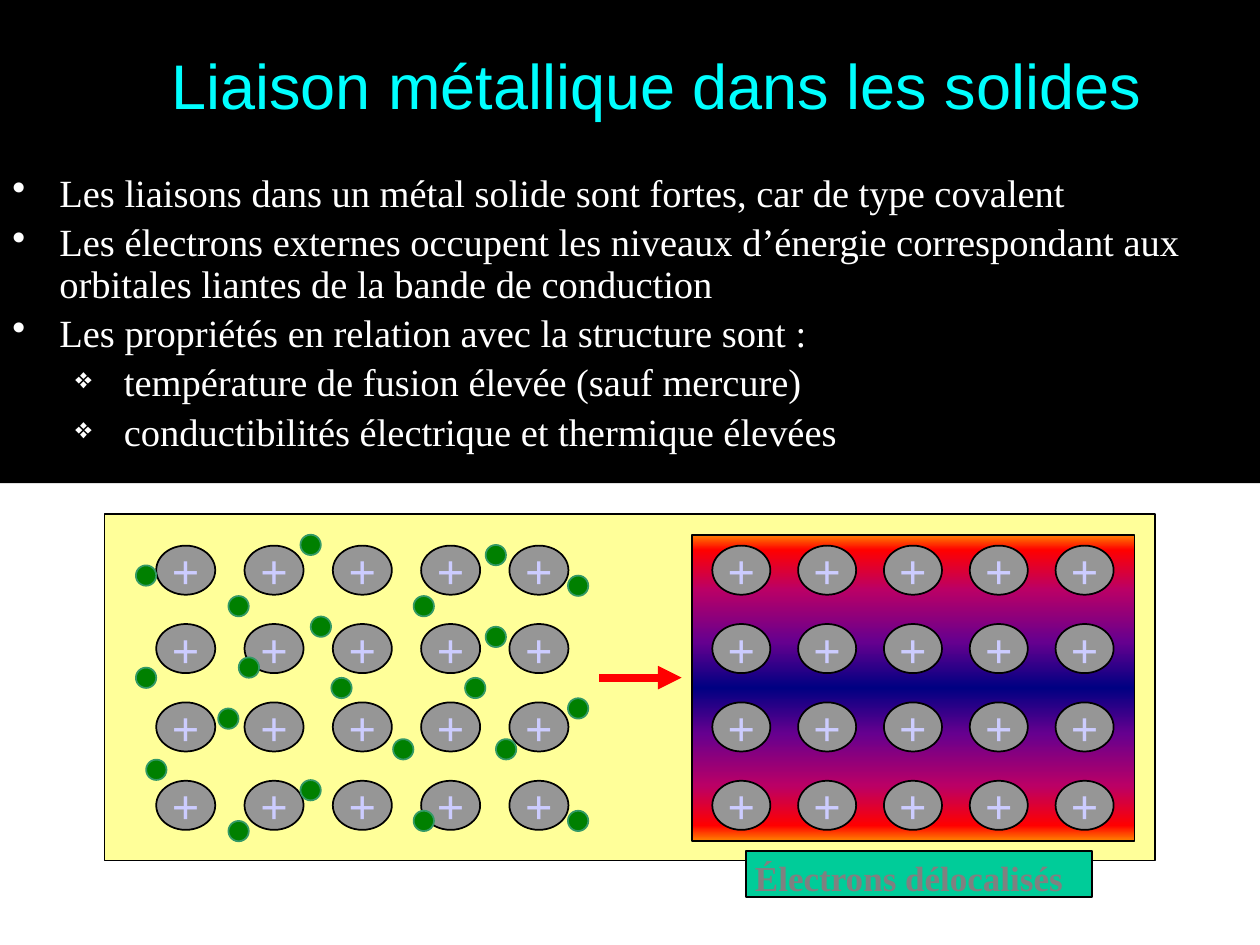
from itertools import product

from lxml.etree import SubElement
from pptx import Presentation
from pptx.dml.color import RGBColor
from pptx.enum.shapes import MSO_CONNECTOR, MSO_SHAPE
from pptx.enum.text import MSO_ANCHOR, PP_ALIGN
from pptx.oxml.ns import qn
from pptx.util import Cm, Pt


def colour(value):
    return RGBColor.from_string(value)


def set_values(target, values):
    for name, value in values.items():
        setattr(target, name, value)


class SlideBuilder:
    serif = "Times New Roman"
    sans = "Arial"
    black = "000000"

    def __init__(self, slide):
        self.slide = slide

    def shape(self, kind, left, top, width, height, fill, line=None):
        shape = self.slide.shapes.add_shape(
            kind, Cm(left), Cm(top), Cm(width), Cm(height))
        shape.shadow.inherit = False
        shape.fill.solid()
        shape.fill.fore_color.rgb = colour(fill)
        if line:
            shape.line.color.rgb = colour(line)
            shape.line.width = Pt(1)
        else:
            shape.line.fill.background()
        return shape

    def rectangle(self, *box, fill, line=None):
        return self.shape(MSO_SHAPE.RECTANGLE, *box, fill, line)

    def text_box(self, *box):
        return self.slide.shapes.add_textbox(*(Cm(length) for length in box))

    def add_text(self, paragraph, text, size, font_colour, **font_format):
        run = paragraph.add_run()
        run.text = text
        set_values(run.font, {"name": self.serif, "size": Pt(size)} | font_format)
        run.font.color.rgb = colour(font_colour)

    def bullet(self, paragraph, symbol, margin, hanging, percent):
        properties = paragraph._p.get_or_add_pPr()
        properties.set("marL", str(Cm(margin)))
        properties.set("indent", str(-Cm(hanging)))
        SubElement(properties, qn("a:buSzPct"), val=str(percent * 1000))
        SubElement(properties, qn("a:buChar"), char=symbol)

    def ion(self, left, top, width):
        shape = self.shape(MSO_SHAPE.OVAL, left, top, width, 0.99,
                           "969696", self.black)
        set_values(shape.text_frame, {"word_wrap": False,
                                      "vertical_anchor": MSO_ANCHOR.MIDDLE})
        paragraph = shape.text_frame.paragraphs[0]
        paragraph.alignment = PP_ALIGN.CENTER
        self.add_text(paragraph, "+", 28, "CCCCFF", bold=True)

    def ion_grid(self, left, pitch, width):
        for row, column in product(range(4), range(5)):
            self.ion(left + column * pitch, 11 + row * 1.58, width)

    def electron(self, left, top):
        self.shape(MSO_SHAPE.OVAL, left, top, 0.41, 0.41, "008000", "339966")

    def gradient(self, shape, stops):
        shape.fill.gradient()
        shape.fill.gradient_angle = 90
        stop_list = shape._element.spPr.find(qn("a:gradFill")).find(qn("a:gsLst"))
        for stop in list(stop_list):
            stop_list.remove(stop)
        for position, value in stops:
            stop = SubElement(stop_list, qn("a:gs"), pos=str(position * 1000))
            SubElement(stop, qn("a:srgbClr"), val=value)

    def arrow(self, start, end, level):
        connector = self.slide.shapes.add_connector(
            MSO_CONNECTOR.STRAIGHT, Cm(start), Cm(level), Cm(end), Cm(level))
        connector.line.color.rgb = colour("FF0000")
        connector.line.width = Pt(4.5)
        properties = connector._element.spPr
        SubElement(properties.find(qn("a:ln")), qn("a:tailEnd"), type="triangle")
        SubElement(properties, qn("a:effectLst"))


BULLETS = [
    (0, "Les liaisons dans un métal solide sont fortes, car de type covalent"),
    (0, "Les électrons externes occupent les niveaux d’énergie correspondant "
        "aux orbitales liantes de la bande de conduction"),
    (0, "Les propriétés en relation avec la structure sont :"),
    (1, "température de fusion élevée (sauf mercure)"),
    (1, "conductibilités électrique et thermique élevées"),
]
# symbol, margin, hanging indent, size in percent
BULLET_STYLES = [("•", 0.95, 0.95, 100), ("❖", 2.25, 0.98, 75)]

# Electron cells (column, row) on a fine grid of 42 by 28 steps
ELECTRONS = [
    (0, 3), (19, 14), (0, 13), (9, 6), (25, 20), (8, 17), (16, 24),
    (1, 22), (9, 28), (17, 8), (34, 9), (27, 6), (35, 20), (16, 0),
    (27, 27), (42, 27), (32, 14), (42, 4), (10, 12), (42, 16), (34, 1),
]

HALF_GRADIENT = [(0, "FF8200"), (5, "FF0000"), (18, "BA0066"), (35, "66008F")]
GRADIENT = (HALF_GRADIENT + [(50, "000082")]
            + [(100 - position, value) for position, value in reversed(HALF_GRADIENT)])


def main():
    presentation = Presentation()
    set_values(presentation, {"slide_width": Cm(25.4), "slide_height": Cm(19.05)})
    builder = SlideBuilder(
        presentation.slides.add_slide(presentation.slide_layouts[6]))

    # Title
    title = builder.rectangle(0, 0, 25.4, 3.39, fill=builder.black)
    set_values(title.text_frame, {"word_wrap": True, "margin_left": Cm(1.31),
                                  "vertical_anchor": MSO_ANCHOR.MIDDLE})
    paragraph = title.text_frame.paragraphs[0]
    paragraph.alignment = PP_ALIGN.CENTER
    builder.add_text(paragraph, "Liaison métallique dans les solides", 36, "00FFFF",
                     name=builder.sans)

    # Bulleted text
    body = builder.rectangle(0, 3.39, 25.4, 6.35, fill=builder.black)
    frame = body.text_frame
    set_values(frame, {"word_wrap": True, "vertical_anchor": MSO_ANCHOR.TOP})
    for index, (level, text) in enumerate(BULLETS):
        paragraph = frame.add_paragraph() if index else frame.paragraphs[0]
        set_values(paragraph, {"level": level, "alignment": PP_ALIGN.LEFT,
                               "line_spacing": 0.9, "space_before": Pt(4.4)})
        builder.bullet(paragraph, *BULLET_STYLES[level])
        builder.add_text(paragraph, text, 22, "FFFFFF")

    # Separate ions on the left
    builder.rectangle(2.11, 10.37, 21.17, 6.98, fill="FFFF99", line=builder.black)
    builder.ion_grid(3.15, 1.78, 1.19)
    builder.arrow(12.08, 13.74, 13.66)

    # Ions in the delocalised cloud on the right
    cloud = builder.rectangle(13.95, 10.78, 8.92, 6.17,
                              fill=builder.black, line=builder.black)
    builder.gradient(cloud, GRADIENT)
    builder.ion_grid(14.36, 1.73, 1.17)

    # Free electrons
    for column, row in ELECTRONS:
        builder.electron(2.74 + 8.71 * column / 42, 10.78 + 5.77 * row / 28)

    # Caption
    builder.rectangle(15.04, 17.15, 6.98, 0.93, fill="00CC99", line=builder.black)
    caption = builder.text_box(14.61, 17.15, 7.41, 1.1)
    set_values(caption.text_frame, {"word_wrap": True, "margin_left": Cm(0.61)})
    builder.add_text(caption.text_frame.paragraphs[0], "Électrons délocalisés",
                     20, "808080", bold=True)

    presentation.save("out.pptx")


if __name__ == "__main__":
    main()
